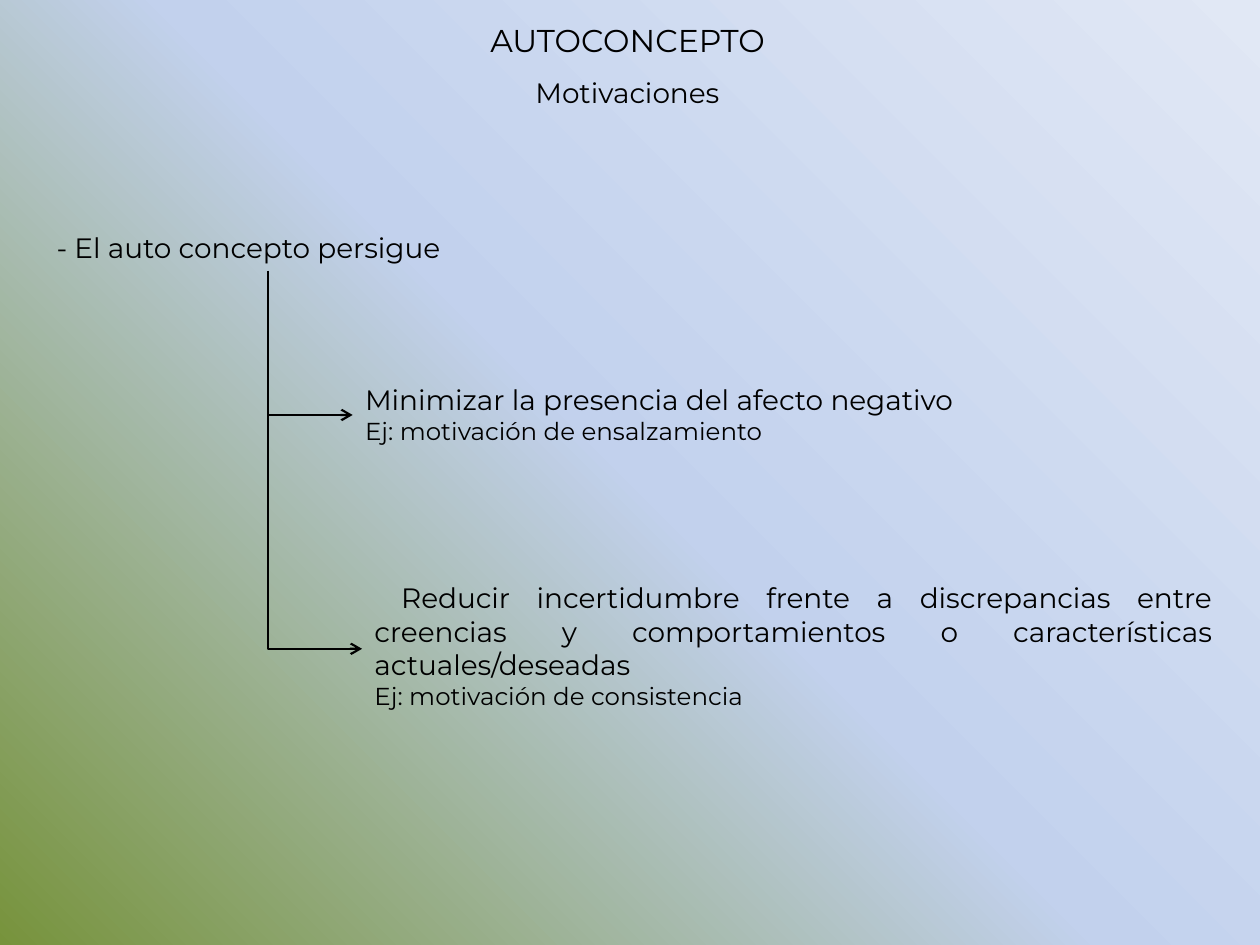
from lxml.etree import SubElement
from pptx import Presentation
from pptx.dml.color import RGBColor
from pptx.enum.dml import MSO_THEME_COLOR
from pptx.enum.shapes import MSO_CONNECTOR
from pptx.enum.text import MSO_ANCHOR, MSO_AUTO_SIZE, PP_ALIGN
from pptx.oxml.ns import qn
from pptx.util import Cm, Pt

BLACK = RGBColor(0x00, 0x00, 0x00)
GREEN = RGBColor(0x77, 0x93, 0x3C)
BLUE = RGBColor(0xC2, 0xD1, 0xED)
PALE = RGBColor(0xE1, 0xE8, 0xF5)
FONT = "Montserrat"
TITLE_ONLY = 5
TRUNK_X = 5.41


def apply(target, values):
    for name, value in values.items():
        setattr(target, name, value)


def paint_background(page):
    """Diagonal gradient from the bottom left to the top right corner."""
    fill = page.background.fill
    fill.gradient()
    fill.gradient_angle = 45
    stop_list = fill._fill._gradFill.find(qn("a:gsLst"))
    for stop in list(stop_list):
        stop_list.remove(stop)
    for position, colour in ((0, GREEN), (50000, BLUE), (100000, PALE)):
        stop = SubElement(stop_list, qn("a:gs"), pos=str(position))
        SubElement(stop, qn("a:srgbClr"), val=str(colour))


def write_lines(shape, box, lines, align, spacing=1.0):
    """Place a text shape in box (cm) and fill it with (text, size) lines."""
    apply(shape, dict(zip(("left", "top", "width", "height"), map(Cm, box))))
    frame = shape.text_frame
    apply(frame, {"word_wrap": True, "auto_size": MSO_AUTO_SIZE.NONE,
                  "vertical_anchor": MSO_ANCHOR.TOP})
    for index, (text, size) in enumerate(lines):
        para = frame.add_paragraph() if index else frame.paragraphs[0]
        apply(para, {"alignment": align, "line_spacing": spacing})
        span = para.add_run()
        span.text = text
        apply(span.font, {"name": FONT, "size": Pt(size)})
        span.font.color.rgb = BLACK


def add_text(page, box, lines):
    shape = page.shapes.add_textbox(0, 0, 0, 0)
    write_lines(shape, box, lines, PP_ALIGN.JUSTIFY)


def add_branch(page, x, top, end_x, end_y):
    """Elbow arrow that runs down from (x, top), then right to its end."""
    drop, run = end_y - top, end_x - x
    middle_x, middle_y = (x + end_x) / 2, (top + end_y) / 2
    # The elbow is laid out flat, then turned by 270 degrees
    arrow = page.shapes.add_connector(
        MSO_CONNECTOR.ELBOW,
        Cm(middle_x + drop / 2), Cm(middle_y - run / 2),
        Cm(middle_x - drop / 2), Cm(middle_y + run / 2))
    properties = arrow._element.spPr
    properties.find(qn("a:xfrm")).set("rot", str(270 * 60000))
    properties.find(qn("a:prstGeom")).set("prst", "bentConnector2")
    arrow.line.width = Pt(1.25)
    arrow.line.color.rgb = BLACK
    SubElement(arrow.line._get_or_add_ln(), qn("a:tailEnd"), type="arrow")
    SubElement(properties, qn("a:effectLst"))


def add_goal(page, box, trunk_top, lines):
    """A goal text with the arrow that leads to the middle of its left side."""
    left, top, _, height = box
    add_branch(page, TRUNK_X, trunk_top, left, top + height / 2)
    add_text(page, box, lines)


def build_concept_slide(deck):
    page = deck.slides.add_slide(deck.slide_layouts[TITLE_ONLY])
    paint_background(page)

    # Heading
    write_lines(page.shapes.title, (4.8, -0.08, 15.7, 2.44),
                [("AUTOCONCEPTO", 18), ("Motivaciones", 16)],
                PP_ALIGN.CENTER, 1.5)

    # Starting statement
    start = (0.89, 4.52, 8.99, 0.94)
    add_text(page, start, [("- El auto concepto persigue", 16)])

    # Goals that branch off it
    trunk_top = start[1] + start[3]
    add_goal(page, (7.11, 7.59, 17.6, 1.55), trunk_top, [
        ("Minimizar la presencia del afecto negativo", 16),
        ("Ej: motivación de ensalzamiento", 14)])
    add_goal(page, (7.3, 11.58, 17.4, 3), trunk_top, [
        (" Reducir incertidumbre frente a discrepancias entre creencias y "
         "comportamientos o características actuales/deseadas", 16),
        ("Ej: motivación de consistencia", 14)])


def main():
    deck = Presentation()
    apply(deck, {"slide_width": Cm(25.4), "slide_height": Cm(19.05)})
    build_concept_slide(deck)
    deck.save("out.pptx")


if __name__ == "__main__":
    main()
